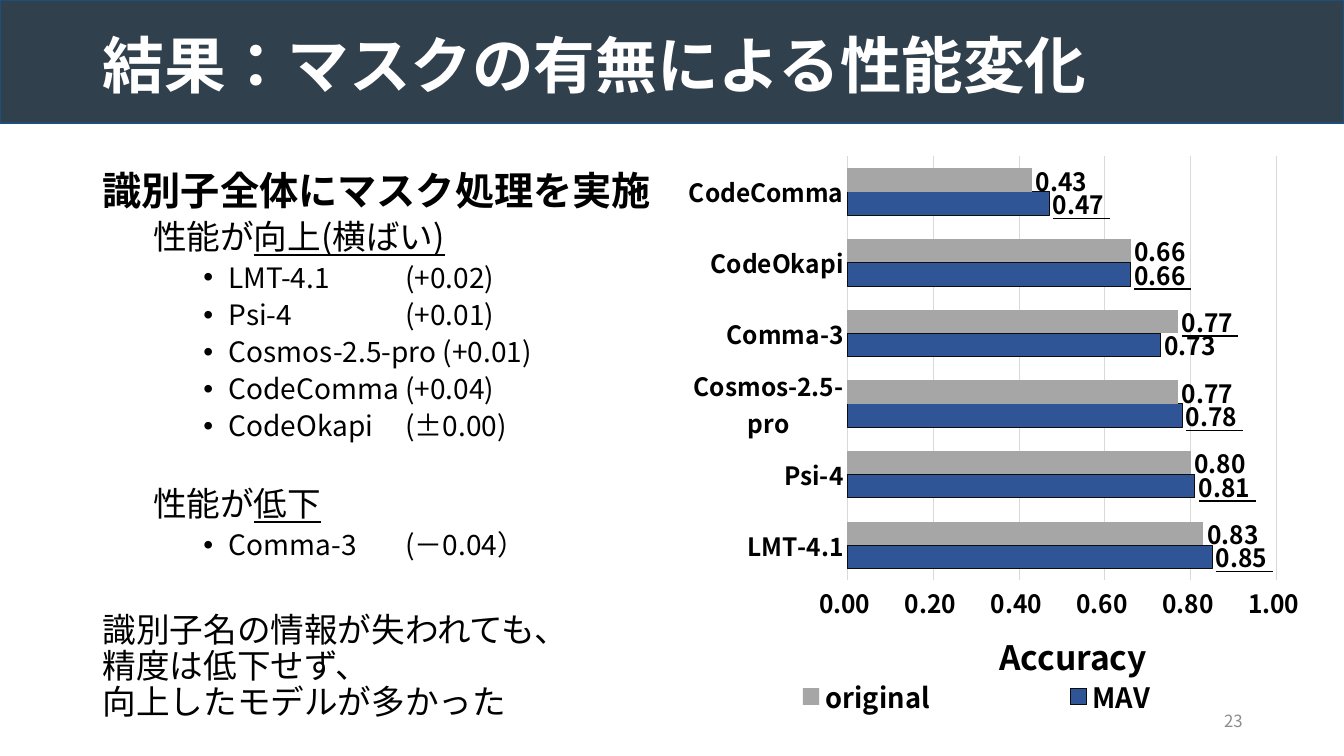
from lxml import etree
from pptx import Presentation
from pptx import util as u
from pptx.chart.data import CategoryChartData
from pptx.dml.color import RGBColor
from pptx.enum import chart as ch, shapes, text
from pptx.oxml.ns import qn

BLACK = RGBColor(0, 0, 0)
WHITE = RGBColor(255, 255, 255)
SLATE = RGBColor(0x31, 0x40, 0x4D)
EDGE = RGBColor(0x1F, 0x4E, 0x79)
BLUE = RGBColor(0x2F, 0x55, 0x97)
INK = RGBColor(0x0D, 0x0D, 0x0D)
GREY = RGBColor(0xA6, 0xA6, 0xA6)
PALE = RGBColor(0xD9, 0xD9, 0xD9)
DIM = RGBColor(0x8C, 0x8C, 0x8C)
NOTO = "Noto Sans CJK JP"
FORM = "0.00_ "

MODELS = ["LMT-4.1", "Psi-4", "Cosmos-2.5-pro", "Comma-3", "CodeOkapi", "CodeComma"]
MASKED = [0.85, 0.81, 0.78, 0.73, 0.66, 0.47]
PLAIN = [0.83, 0.80, 0.77, 0.77, 0.66, 0.43]
SWAPPED = 3

LINES = [
    (0, 10, "識別子全体にマスク処理を実施", ""),
    (1, 5, "性能が", "向上(横ばい)"),
    (2, 5, "LMT-4.1\t(+0.02)", ""),
    (2, 5, "Psi-4\t\t(+0.01)", ""),
    (2, 5, "Cosmos-2.5-pro (+0.01)", ""),
    (2, 5, "CodeComma\t(+0.04)", ""),
    (2, 5, "CodeOkapi\t(±0.00)", ""),
    (1, 32, "性能が", "低下"),
    (2, 5, "Comma-3\t(－0.04）", ""),
    (0, 37, "識別子名の情報が失われても、\v精度は低下せず、\v向上したモデルが多かった", ""),
]


class Deck:
    """Holds the style and the current slide; places are shares of its size."""

    def __init__(self):
        self.prs = Presentation()
        self.prs.slide_width = u.Inches(13.33)
        self.prs.slide_height = u.Inches(7.5)
        self.slide = self.prs.slides.add_slide(self.prs.slide_layouts[6])

    def place(self, x, y, w, h):
        wide, high = self.prs.slide_width, self.prs.slide_height
        return int(x * wide), int(y * high), int(w * wide), int(h * high)

    def font(self, font, size, color=BLACK, bold=True, name=NOTO):
        font.size, font.bold = u.Pt(size), bold
        font.color.rgb = color
        font.name = name

    def style(self, para, size, color=BLACK, bold=True, name=NOTO):
        for run in para.runs:
            self.font(run.font, size, color, bold, name)
            props = run._r.get_or_add_rPr()
            props.set("lang", "ja-JP")
            etree.SubElement(props, qn("a:ea")).set("typeface", NOTO)

    def band(self, box, fill, line):
        band = self.slide.shapes.add_shape(shapes.MSO_SHAPE.RECTANGLE, *self.place(*box))
        band.shadow.inherit = False
        band.fill.solid()
        band.fill.fore_color.rgb = fill
        band.line.color.rgb = line
        band.line.width = u.Pt(1)

    def frame(self, box, anchor=text.MSO_ANCHOR.TOP, wrap=True):
        frame = self.slide.shapes.add_textbox(*self.place(*box)).text_frame
        frame.word_wrap = wrap
        frame.vertical_anchor = anchor
        return frame

    def label(self, box, words, size, anchor=text.MSO_ANCHOR.TOP, align=None, wrap=True, **look):
        frame = self.frame(box, anchor, wrap)
        frame.text = words
        para = frame.paragraphs[0]
        para.alignment = align
        para.line_spacing = 0.9 if anchor == text.MSO_ANCHOR.BOTTOM else 1.0
        self.style(para, size, **look)

    def outline(self, box, lines):
        frame = self.frame(box)
        for i, (level, gap, words, marked) in enumerate(lines):
            para = frame.add_paragraph() if i else frame.paragraphs[0]
            para.text = words
            para.level = level
            para.line_spacing, para.space_before = 0.9, u.Pt(gap)
            if marked:
                run = para.add_run()
                run.text = marked
                run.font.underline = True
            self.style(para, 28 if i == 0 else (24, 24, 20)[level], bold=i == 0)
            props = para._p.get_or_add_pPr()
            props.set("marL", str(u.Inches((0, 0.5, 1.25)[level])))
            props.set("indent", str(u.Inches((0, 0, -0.25)[level])))
            if level == 2:
                etree.SubElement(props, qn("a:buFont")).set("typeface", "Arial")
                etree.SubElement(props, qn("a:buChar")).set("char", "•")
                stops = etree.SubElement(props, qn("a:tabLst"))
                for inch in (2, 3):
                    stop = etree.SubElement(stops, qn("a:tab"))
                    stop.set("pos", str(u.Inches(inch)))
                    stop.set("algn", "l")

    def layout(self, node, index, inner, box):
        old = node.find(qn("c:layout"))
        if old is not None:
            node.remove(old)
        lay = etree.Element(qn("c:layout"))
        node.insert(index, lay)
        man = etree.SubElement(lay, qn("c:manualLayout"))
        parts = [("layoutTarget", "inner")] if inner else []
        parts += [("xMode", "edge"), ("yMode", "edge"), *zip("xywh", box)]
        for tag, val in parts:
            etree.SubElement(man, qn("c:" + tag)).set("val", str(val))

    def axes(self, chart):
        cat, val = chart.category_axis, chart.value_axis
        for axis in (cat, val):
            self.font(axis.tick_labels.font, 18)
            axis.major_tick_mark = axis.minor_tick_mark = ch.XL_TICK_MARK.NONE
        val.minimum_scale, val.maximum_scale, val.major_unit = 0, 1, 0.2
        val.tick_labels.number_format = FORM
        val.tick_labels.number_format_is_linked = False
        val.format.line.fill.background()
        for line in (cat.format.line, val.major_gridlines.format.line):
            line.color.rgb = PALE
            line.width = u.Pt(0.75)

    def bars(self, box, plot_box, key_box, cats, rows):
        data = CategoryChartData(number_format=FORM)
        data.categories = cats
        for name, vals, *_ in rows:
            data.add_series(name, vals)
        kind = ch.XL_CHART_TYPE.BAR_CLUSTERED
        chart = self.slide.shapes.add_chart(kind, *self.place(*box), data).chart
        chart.has_title = False
        self.font(chart.font, 10, bold=False)
        self.axes(chart)
        plot = chart.plots[0]
        plot.gap_width, plot.overlap, plot.vary_by_categories = 100, 0, False
        for series, (_, _, fill, edge, under) in zip(plot.series, rows):
            series.format.fill.solid()
            series.format.fill.fore_color.rgb = fill
            if edge:
                series.format.line.color.rgb = edge
                series.format.line.width = u.Pt(0.75)
            marks = series.data_labels
            marks.show_value = True
            marks.number_format, marks.number_format_is_linked = FORM, False
            odd = series.points[SWAPPED].data_label
            for mark, line in ((marks, under), (odd, not under)):
                mark.position = ch.XL_LABEL_POSITION.OUTSIDE_END
                self.font(mark.font, 18)
                mark.font.underline = line
        chart.has_legend = True
        chart.legend.position = ch.XL_LEGEND_POSITION.BOTTOM
        chart.legend.include_in_layout = False
        self.font(chart.legend.font, 20)
        self.layout(chart.element.xpath(".//c:plotArea")[0], 0, True, plot_box)
        self.layout(chart.element.xpath(".//c:legend")[0], 1, False, key_box)


def main():
    deck = Deck()
    deck.bars((0.5, 0.186, 0.471, 0.779), (0.285, 0.027, 0.697, 0.72), (0, 0.904, 0.99, 0.08),
              MODELS, [("MAV", MASKED, BLUE, INK, True), ("original", PLAIN, GREY, None, False)])
    deck.band((0, 0, 1, 0.163), SLATE, EDGE)
    deck.label((0.069, 0.024, 0.863, 0.117), "結果：マスクの有無による性能変化", 44,
               text.MSO_ANCHOR.BOTTOM, color=WHITE, name="Arial")
    deck.label((0.707, 0.927, 0.225, 0.053), "23", 12, text.MSO_ANCHOR.MIDDLE,
               text.PP_ALIGN.RIGHT, color=DIM, bold=False)
    deck.outline((0.069, 0.22, 0.431, 0.77), LINES)
    deck.label((0.736, 0.836, 0.128, 0.067), "Accuracy", 24, wrap=False)
    deck.prs.save("out.pptx")


if __name__ == "__main__":
    main()
